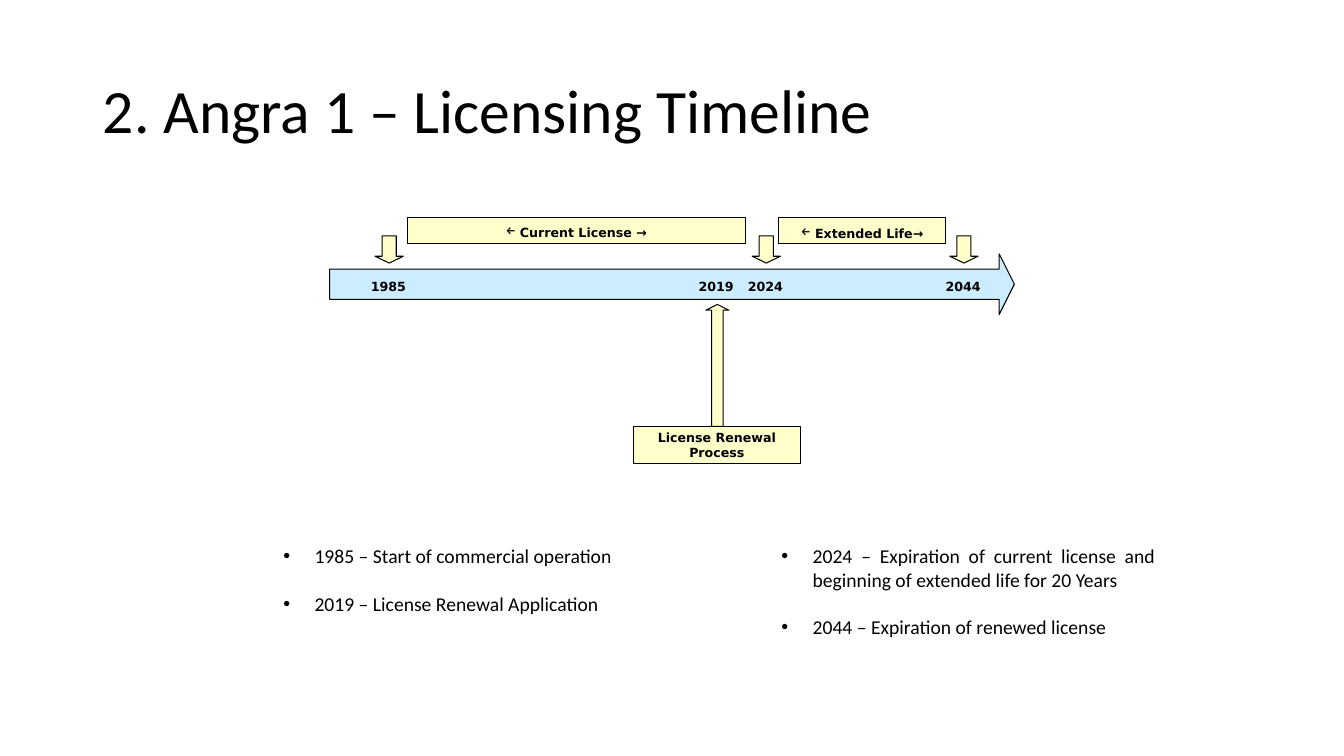
"""Build the Angra 1 licensing timeline slide."""
from dataclasses import dataclass

from lxml import etree
from pptx import Presentation
from pptx.dml.color import RGBColor
from pptx.enum.shapes import MSO_SHAPE
from pptx.enum.text import MSO_ANCHOR, MSO_AUTO_SIZE, PP_ALIGN
from pptx.oxml.ns import qn
from pptx.util import Inches, Pt

RECT, DOWN, RIGHT = MSO_SHAPE.RECTANGLE, MSO_SHAPE.DOWN_ARROW, MSO_SHAPE.RIGHT_ARROW
MIDDLE, TOP = MSO_ANCHOR.MIDDLE, MSO_ANCHOR.TOP
GROW, NO_FIT = MSO_AUTO_SIZE.SHAPE_TO_FIT_TEXT, MSO_AUTO_SIZE.NONE
LEFT, CENTER, JUSTIFY = PP_ALIGN.LEFT, PP_ALIGN.CENTER, PP_ALIGN.JUSTIFY


@dataclass(frozen=True)
class Theme:
    ink: RGBColor = RGBColor(0, 0, 0)
    axis: RGBColor = RGBColor(0xCC, 0xEC, 0xFF)
    marker: RGBColor = RGBColor(0xFF, 0xFF, 0xCC)
    text_font: str = "Calibri"
    label_font: str = "DejaVu Sans"
    title_size: float = 44
    list_size: float = 14
    label_size: float = 9
    outline: float = 0.75


@dataclass(frozen=True)
class Box:
    left: float
    top: float
    width: float
    height: float

    def emu(self) -> list:
        return [Inches(v) for v in (self.left, self.top, self.width, self.height)]


@dataclass(frozen=True)
class Period:
    text: str
    bar: Box
    label: Box


@dataclass(frozen=True)
class Year:
    text: str
    center: float
    arrow_above: bool = True


@dataclass(frozen=True)
class Events:
    box: Box
    items: tuple


THEME = Theme()
LABEL = {"name": THEME.label_font, "size": Pt(THEME.label_size), "bold": True}
LIST = {"name": THEME.text_font, "size": Pt(THEME.list_size)}
TITLE = {"name": THEME.text_font, "size": Pt(THEME.title_size)}
PERIODS = (
    Period(" Current License →", Box(4.04, 2.16, 3.35, 0.26), Box(4.66, 2.18, 2.11, 0.25)),
    Period(" Extended Life→", Box(7.72, 2.16, 1.66, 0.26), Box(7.82, 2.19, 1.46, 0.25)),
)
YEARS = (Year("1985", 3.86), Year("2019", 7.11, False), Year("2024", 7.6), Year("2044", 9.56))
EVENTS = (
    Events(Box(2.71, 5.35, 4.29, 0.81), (
        "1985 – Start of commercial operation",
        "2019 – License Renewal Application")),
    Events(Box(7.65, 5.35, 3.91, 1.04), (
        "2024 – Expiration of current license and beginning of extended life for 20 Years",
        "2044 – Expiration of renewed license")),
)


def set_attrs(target, values: dict) -> None:
    for name, value in values.items():
        setattr(target, name, value)


def place(s, box: Box) -> None:
    set_attrs(s, dict(zip(("left", "top", "width", "height"), box.emu())))


def write(p, text: str, font: dict, align, bullet: str = "", indent: float = 0) -> None:
    if bullet:
        pPr = p._p.get_or_add_pPr()
        pPr.set("marL", str(Inches(indent)))
        pPr.set("indent", str(-Inches(indent)))
        etree.SubElement(pPr, qn("a:buChar")).set("char", bullet)
    p.alignment = align
    r = p.add_run()
    r.text = text
    set_attrs(r.font, font)
    r.font.color.rgb = THEME.ink


def add_shape(slide, kind, box: Box, fill: RGBColor):
    s = slide.shapes.add_shape(kind, *box.emu())
    s.shadow.inherit = False
    s.fill.solid()
    s.fill.fore_color.rgb = fill
    s.line.color.rgb = THEME.ink
    s.line.width = Pt(THEME.outline)
    if kind != RECT:
        s.adjustments[0], s.adjustments[1] = 0.5, 0.25
    return s


def add_label(slide, text: str, box: Box, wrap: bool, align, bullet: str = "") -> None:
    tf = slide.shapes.add_textbox(*box.emu()).text_frame
    set_attrs(tf, {"word_wrap": wrap, "auto_size": GROW})
    write(tf.paragraphs[0], text, LABEL, align, bullet)


def add_events(s, events: Events) -> None:
    place(s, events.box)
    tf = s.text_frame
    set_attrs(tf, {"word_wrap": True, "auto_size": GROW, "vertical_anchor": TOP})
    for i, text in enumerate(events.items):
        p = tf.add_paragraph() if i else tf.paragraphs[0]
        write(p, text, LIST, JUSTIFY, "•", 0.31)
        set_attrs(p, {"space_before": Pt(17 if i else 0), "line_spacing": 1.0})


def add_title(s, text: str) -> None:
    place(s, Box(0.92, 0.4, 11.5, 1.45))
    set_attrs(s.text_frame, {"vertical_anchor": MIDDLE, "auto_size": NO_FIT})
    p = s.text_frame.paragraphs[0]
    write(p, text, TITLE, LEFT)
    p.line_spacing = 0.9


def add_renewal(slide) -> None:
    s = add_shape(slide, RECT, Box(6.28, 4.23, 1.66, 0.37), THEME.marker)
    tf = s.text_frame
    set_attrs(tf, {"word_wrap": False, "vertical_anchor": MIDDLE})
    write(tf.paragraphs[0], "License Renewal", LABEL, CENTER)
    write(tf.add_paragraph(), "Process", LABEL, CENTER)
    add_shape(slide, DOWN, Box(7, 3.02, 0.23, 1.21), THEME.marker).rotation = 180


def main() -> None:
    prs = Presentation()
    prs.slide_width, prs.slide_height = Inches(13.33), Inches(7.5)
    slide = prs.slides.add_slide(prs.slide_layouts[3])
    title, *bodies = slide.placeholders
    add_title(title, "2. Angra 1 – Licensing Timeline")
    add_shape(slide, RIGHT, Box(3.27, 2.52, 6.79, 0.6), THEME.axis)
    for period in PERIODS:
        add_shape(slide, RECT, period.bar, THEME.marker)
        add_label(slide, period.text, period.label, True, CENTER, "←")
    for year in YEARS:
        if year.arrow_above:
            add_shape(slide, DOWN, Box(year.center - 0.14, 2.34, 0.28, 0.27), THEME.marker)
        add_label(slide, year.text, Box(year.center - 0.28, 2.72, 0.56, 0.25), False, LEFT)
    add_renewal(slide)
    for s, events in zip(bodies, EVENTS):
        add_events(s, events)
    prs.save("out.pptx")


if __name__ == "__main__":
    main()
